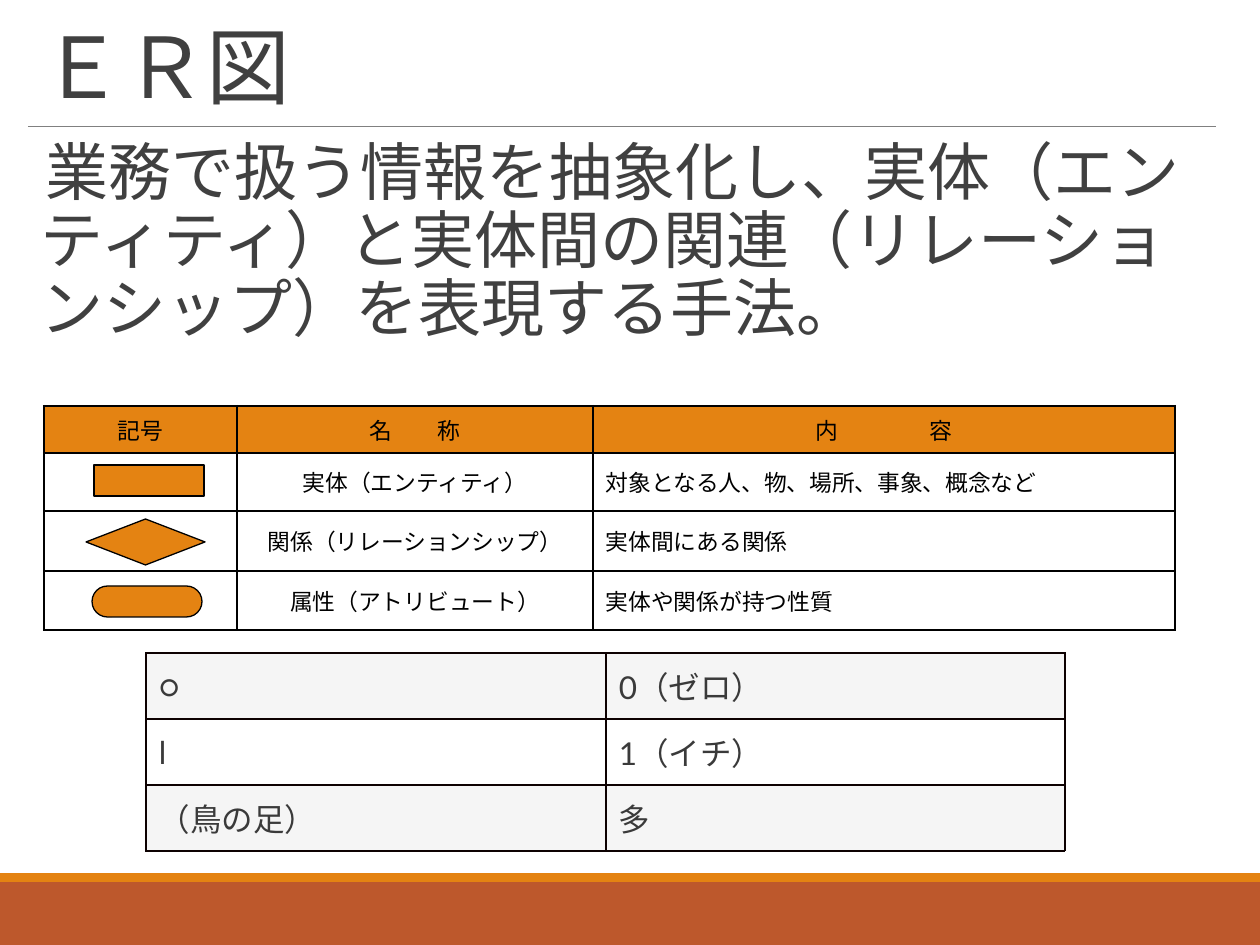
from lxml import etree
from pptx import Presentation
from pptx.dml.color import RGBColor
from pptx.enum.shapes import MSO_CONNECTOR, MSO_SHAPE
from pptx.enum.text import MSO_ANCHOR, MSO_AUTO_SIZE, PP_ALIGN
from pptx.oxml.ns import qn
from pptx.util import Pt

SCALE = 914400 / 126
LEFT, CENTER = PP_ALIGN.LEFT, PP_ALIGN.CENTER
TOP, MIDDLE, BOTTOM = MSO_ANCHOR.TOP, MSO_ANCHOR.MIDDLE, MSO_ANCHOR.BOTTOM
RECT, DIAMOND, ROUNDED = MSO_SHAPE.RECTANGLE, MSO_SHAPE.DIAMOND, MSO_SHAPE.ROUNDED_RECTANGLE
STRAIGHT = MSO_CONNECTOR.STRAIGHT
NO_FIT = MSO_AUTO_SIZE.NONE
JAPANESE = "Noto Sans CJK JP"
COLORS = {
    "orange": "E48312", "rust": "BD582C", "rule": "808080", "heading": "404040",
    "text": "3A3A3A", "black": "000000", "grid": "0D0101",
    "white": "FFFFFF", "band": "F5F5F5",
}


def px(length):
    return round(length * SCALE)


def emu_box(box):
    return [px(length) for length in box]


def rgb(name):
    return RGBColor.from_string(COLORS[name])


def add_element(parent, tag, **attributes):
    child = etree.SubElement(parent, qn(tag))
    for key, value in attributes.items():
        child.set(key, str(value))
    return child


def write(frame, text, size, font, color, align=LEFT, line=None, before=None, after=None, spacing=None):
    paragraph = frame.paragraphs[0]
    paragraph.alignment = align
    paragraph.line_spacing = line
    paragraph.space_before = before
    paragraph.space_after = after
    run = paragraph.add_run()
    run.text = text
    run.font.size = Pt(size)
    run.font.name = font
    run.font.color.rgb = rgb(color)
    properties = run.font._element
    properties.set("lang", "ja-JP")
    if spacing is not None:
        properties.set("spc", str(spacing))
    add_element(properties, "a:ea", typeface=JAPANESE)
    return paragraph


def place(holder, box, anchor):
    holder.left, holder.top, holder.width, holder.height = emu_box(box)
    frame = holder.text_frame
    frame.word_wrap = True
    frame.auto_size = NO_FIT
    frame.vertical_anchor = anchor
    return frame


def add_block(slide, kind, box, fill, outline=None):
    block = slide.shapes.add_shape(kind, *emu_box(box))
    block.shadow.inherit = False
    block.fill.solid()
    block.fill.fore_color.rgb = rgb(fill)
    if outline:
        block.line.color.rgb = rgb(outline)
        block.line.width = Pt(0.75)
    else:
        block.line.fill.background()
    return block


def add_footer(slide, box):
    left, top, width, height = box
    stripe = 9
    add_block(slide, RECT, (left, top + stripe, width, height - stripe), "rust")
    add_block(slide, RECT, (left, top, width, stripe), "orange")


def add_heading(slide, box):
    left, top, width, height = box
    frame = place(slide.shapes.title, box, BOTTOM)
    write(frame, "ＥＲ図", 48, "Calibri", "heading", line=0.85, spacing=-50)
    rule_y = top + height + 4
    rule = slide.shapes.add_connector(STRAIGHT, *emu_box((left, rule_y, left + width, rule_y)))
    rule.line.color.rgb = rgb("rule")
    rule.line.width = Pt(0.5)
    add_element(rule._element.spPr, "a:effectLst")


def add_definition(slide, box):
    frame = place(slide.placeholders[1], box, TOP)
    frame.margin_left = frame.margin_right = 0
    definition = write(
        frame, "業務で扱う情報を抽象化し、実体（エンティティ）と実体間の関連（リレーションシップ）を表現する手法。",
        36, "Calibri", "heading", line=0.9, before=Pt(12), after=Pt(2))
    properties = definition._p.get_or_add_pPr()
    properties.set("marL", str(px(13)))
    properties.set("indent", str(px(-13)))
    bullet_color = add_element(properties, "a:buClr")
    add_element(bullet_color, "a:srgbClr", val=COLORS["orange"])
    add_element(properties, "a:buChar", char=" ")


def add_grid(slide, left, top, columns, rows):
    grid = slide.shapes.add_table(
        len(rows), len(columns), *emu_box((left, top, sum(columns), sum(rows)))).table
    grid.first_row = grid.horz_banding = False
    for column, width in zip(grid.columns, columns):
        column.width = px(width)
    for row, height in zip(grid.rows, rows):
        row.height = px(height)
    return grid


def style_cell(cell, fill, border, widths, margins):
    properties = cell._tc.get_or_add_tcPr()
    for side, width in zip("LRTB", widths):
        edge = add_element(properties, f"a:ln{side}", w=Pt(width))
        add_element(add_element(edge, "a:solidFill"), "a:srgbClr", val=COLORS[border])
    cell.fill.solid()
    cell.fill.fore_color.rgb = rgb(fill)
    cell.vertical_anchor = MIDDLE
    cell.margin_left = cell.margin_right = px(margins[0])
    cell.margin_top = cell.margin_bottom = px(margins[1])


def add_notation(slide, left, top):
    entries = [
        ("記号", "名　　称", "内　　　　容"),
        ("", "実体（エンティティ）", "対象となる人、物、場所、事象、概念など"),
        ("", "関係（リレーションシップ）", "実体間にある関係"),
        ("", "属性（アトリビュート）", "実体や関係が持つ性質"),
    ]
    grid = add_grid(slide, left, top, (193, 356, 582), (47, 58, 60, 59))
    for r, entry in enumerate(entries):
        for c, text in enumerate(entry):
            outer = (c == 0, c == 2, r == 0, r == 3)
            widths = [1.5 if edge else 1 for edge in outer]
            cell = grid.cell(r, c)
            style_cell(cell, "white" if r else "orange", "black", widths, (13, 6) if c == 2 else (0, 0))
            if text:
                align = LEFT if r and c == 2 else CENTER
                paragraph = write(cell.text_frame, text, 13, JAPANESE, "black", align=align)
                before = add_element(paragraph._p.get_or_add_pPr(), "a:spcBef")
                add_element(before, "a:spcPct", val=20000)

    symbols = [
        (RECT, 50, 59, 110, 31),
        (DIAMOND, 42, 113, 119, 46),
        (ROUNDED, 48, 180, 110, 31),
    ]
    for kind, x, y, width, height in symbols:
        symbol = add_block(slide, kind, (left + x, top + y, width, height), "orange", "black")
        if kind == ROUNDED:
            symbol.adjustments[0] = 0.5


def add_cardinality(slide, left, top):
    entries = [("○", "0（ゼロ）"), ("l", "1（イチ）"), ("（鳥の足）", "多")]
    grid = add_grid(slide, left, top, (460, 459), [66] * len(entries))
    for r, entry in enumerate(entries):
        for c, text in enumerate(entry):
            cell = grid.cell(r, c)
            style_cell(cell, "white" if r % 2 else "band", "grid", [0.75] * 4, (13, 10))
            write(cell.text_frame, text, 18, "Lato", "text")


def main():
    deck = Presentation()
    deck.slide_width, deck.slide_height = px(1260), px(945)
    slide = deck.slides.add_slide(deck.slide_layouts[1])
    add_footer(slide, (0, 873, 1260, 72))
    add_heading(slide, (28, 11, 1188, 111))
    add_definition(slide, (28, 135, 1188, 724))
    add_notation(slide, 44, 406)
    add_cardinality(slide, 146, 653)
    deck.save("out.pptx")


if __name__ == "__main__":
    main()
